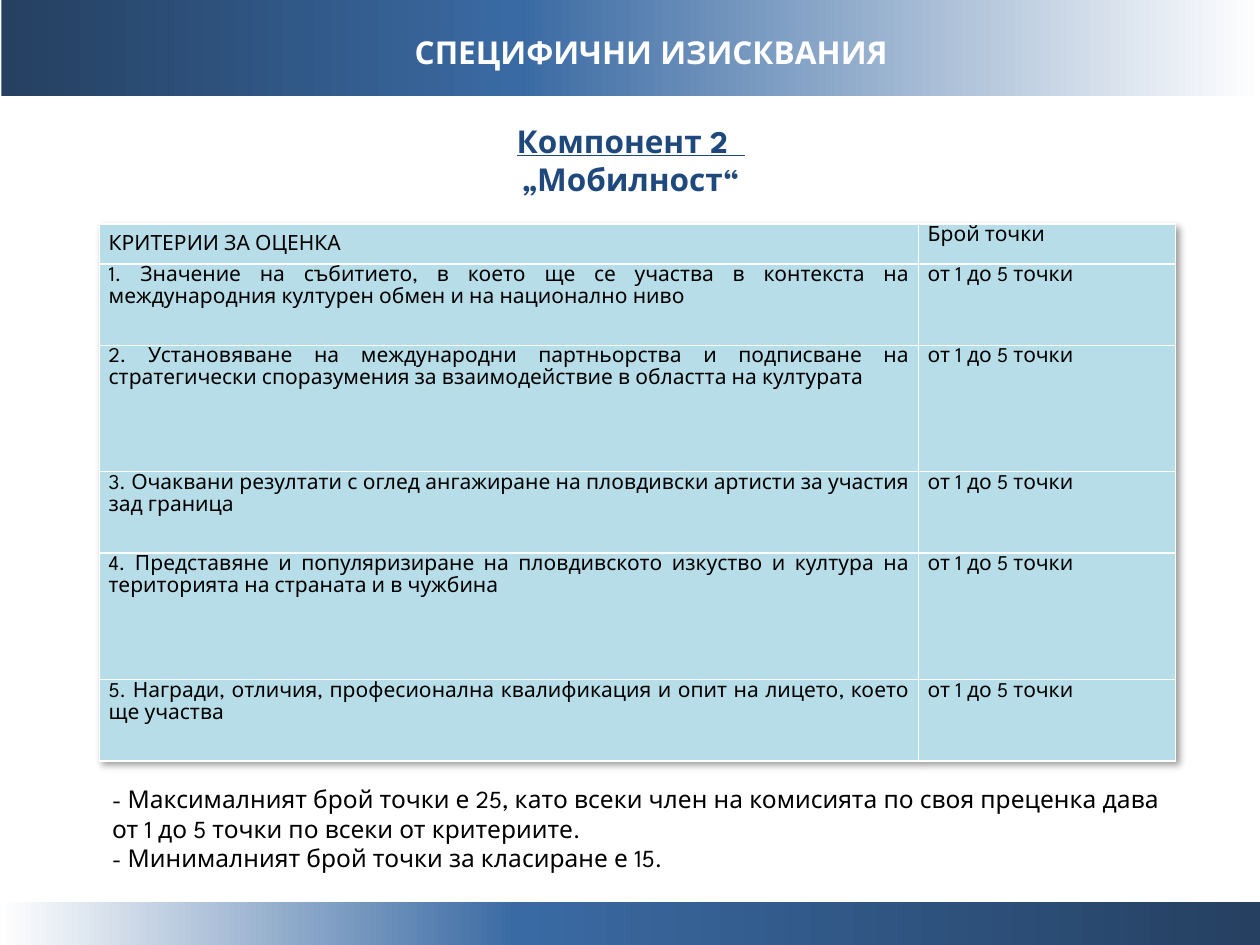
from lxml.etree import SubElement
from pptx import Presentation
from pptx.dml.color import RGBColor
from pptx.enum.shapes import MSO_SHAPE as SHAPE
from pptx.enum.text import MSO_ANCHOR as ANCHOR, PP_ALIGN as ALIGN
from pptx.oxml import parse_xml
from pptx.oxml.ns import nsdecls, qn
from pptx.util import Cm, Pt

NAVY, BLUE, WHITE, BLACK = "254061", "3A6AA3", "FFFFFF", "000000"
TITLE_BLUE, PALE = "1F497D", "B7DEE8"


def color(value):
    return RGBColor.from_string(value)


class Deck:
    font = "League Spartan"

    def __init__(self, width, height):
        self.prs = Presentation()
        self.prs.slide_width, self.prs.slide_height = Cm(width), Cm(height)
        self.s = self.prs.slides.add_slide(self.prs.slide_layouts[6])

    def set_text(self, tf, lines, size, fill, bold=False, align=ALIGN.LEFT, spacing=None):
        tf.text = "\n".join(lines)
        for p in tf.paragraphs:
            p.alignment = align
            p.line_spacing = spacing
            for r in p.runs:
                f = r.font
                f.name, f.size, f.bold = self.font, Pt(size), bold
                f.color.rgb = color(fill)

    def band(self, x, y, w, h, stops):
        sp = self.s.shapes.add_shape(SHAPE.RECTANGLE, Cm(x), Cm(y), Cm(w), Cm(h))
        sp.shadow.inherit = False
        sp.line.fill.background()
        sp.fill.gradient()
        sp.fill.gradient_angle = 0
        gs_list = next(sp.element.iter(qn("a:gsLst")))
        gs_list.clear()
        for pos, value in stops:
            gs = SubElement(gs_list, qn("a:gs"), pos=str(pos * 1000))
            SubElement(gs, qn("a:srgbClr"), val=value)

    def text(self, x, y, w, h, lines, size, fill, anchor=ANCHOR.TOP, **style):
        tf = self.s.shapes.add_textbox(Cm(x), Cm(y), Cm(w), Cm(h)).text_frame
        tf.word_wrap = True
        tf.vertical_anchor = anchor
        self.set_text(tf, lines, size, fill, **style)
        return tf

    def cell(self, cell, content):
        cell.margin_left = cell.margin_right = Cm(0.18)
        cell.margin_top = cell.margin_bottom = 0
        self.set_text(cell.text_frame, [content], 12, BLACK,
                      align=ALIGN.JUSTIFY, spacing=1.15)
        pr = cell._tc.get_or_add_tcPr()
        for side in "LRTB":
            ln = SubElement(pr, qn(f"a:ln{side}"), w=str(int(Pt(1))))
            SubElement(SubElement(ln, qn("a:solidFill")), qn("a:srgbClr"), val=WHITE)
        cell.fill.solid()
        cell.fill.fore_color.rgb = color(PALE)

    def table(self, x, y, widths, heights, rows):
        frame = self.s.shapes.add_table(len(rows), len(widths), Cm(x), Cm(y),
                                        Cm(sum(widths)), Cm(sum(heights)))
        table = frame.table
        for column, width in zip(table.columns, widths):
            column.width = Cm(width)
        for row, height, values in zip(table.rows, heights, rows):
            row.height = Cm(height)
            for cell, value in zip(row.cells, values):
                self.cell(cell, value)
        # Soft shadow around the whole table
        table._tbl.tblPr.insert(0, parse_xml(
            f'<a:effectLst {nsdecls("a")}><a:outerShdw blurRad="50800" dist="38100" '
            'dir="2700000" algn="tl" rotWithShape="0"><a:prstClr val="black">'
            '<a:alpha val="40000"/></a:prstClr></a:outerShdw></a:effectLst>'))
        return table


def main():
    deck = Deck(25.4, 19.05)

    # Header band and title
    deck.band(0.03, 0, 25.4, 1.93, [(0, NAVY), (41, BLUE), (100, WHITE)])
    tf = deck.text(1.7, 0.74, 22.86, 1.37, ["СПЕЦИФИЧНИ ИЗИСКВАНИЯ"], 18, WHITE,
                   anchor=ANCHOR.MIDDLE, bold=True, align=ALIGN.CENTER)
    tf.margin_bottom = Cm(0.9)

    # Component heading
    tf = deck.text(2.01, 2.34, 21.41, 1.8, ["Компонент 2  ", "„Мобилност“"], 18,
                   TITLE_BLUE, bold=True, align=ALIGN.CENTER)
    tf.paragraphs[0].runs[0].font.underline = True

    # Footer band
    deck.band(0, 18.19, 25.43, 0.86, [(0, WHITE), (41, BLUE), (100, NAVY)])

    # Assessment criteria
    criteria = [
        "Значение на събитието, в което ще се участва в контекста на "
        "международния културен обмен и на национално ниво",
        "Установяване на международни партньорства и подписване на "
        "стратегически споразумения за взаимодействие в областта на културата",
        "Очаквани резултати с оглед ангажиране на пловдивски артисти за участия "
        "зад граница",
        "Представяне и популяризиране на пловдивското изкуство и култура на "
        "територията на страната и в чужбина",
        "Награди, отличия, професионална квалификация и опит на лицето, което "
        "ще участва",
    ]
    rows = [("КРИТЕРИИ ЗА ОЦЕНКА", "Брой точки")]
    rows += [(f"{n}. {c}", "от 1 до 5 точки") for n, c in enumerate(criteria, 1)]
    low, high = 1.64, 2.55
    table = deck.table(2.01, 4.52, [16.51, 5.18],
                       [0.8, low, high, low, high, low], rows)
    table.cell(0, 0).vertical_anchor = ANCHOR.MIDDLE

    # Scoring notes
    deck.text(2.01, 15.67, 21.69, 2.06, [
        "- Максималният брой точки е 25, като всеки член на комисията по своя "
        "преценка дава от 1 до 5 точки по всеки от критериите.",
        "- Минималният брой точки за класиране е 15.",
    ], 14, BLACK, anchor=ANCHOR.MIDDLE)

    deck.prs.save("out.pptx")


if __name__ == "__main__":
    main()
